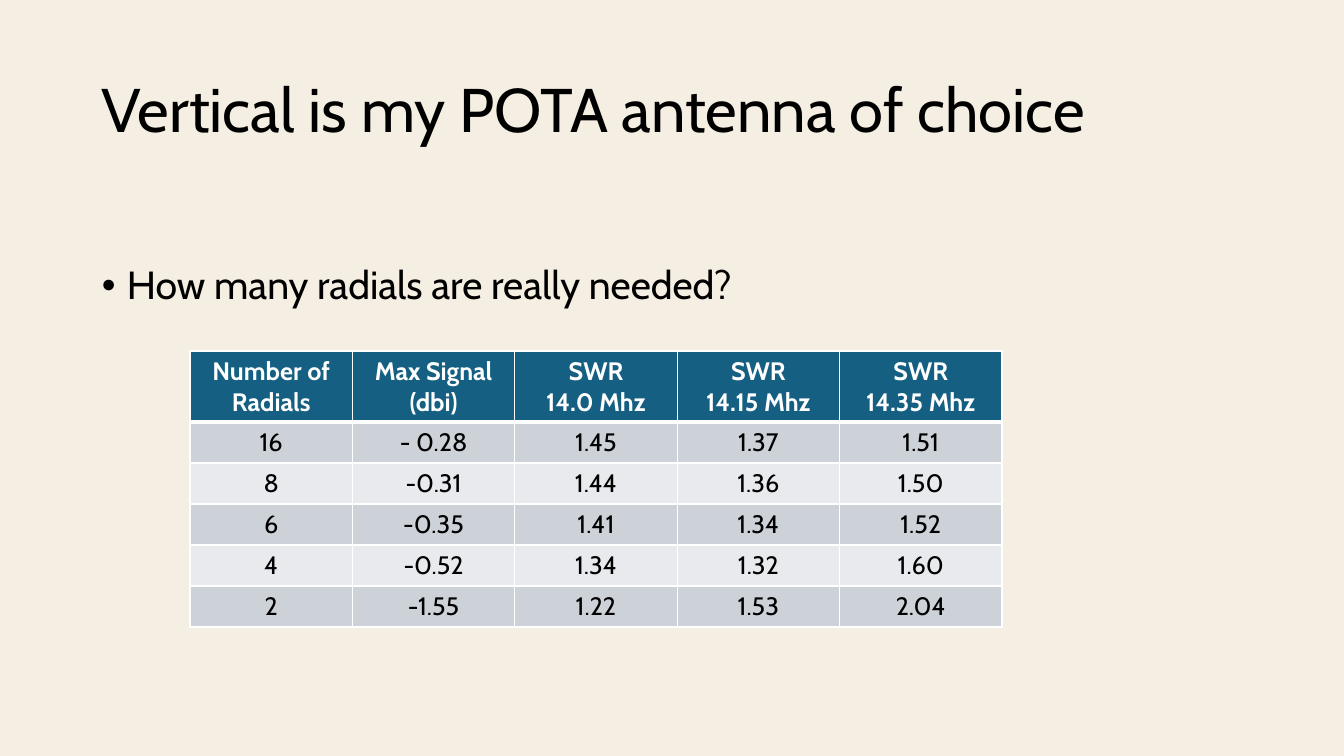
from dataclasses import dataclass

from lxml import etree
from pptx import Presentation
from pptx.dml.color import RGBColor
from pptx.enum.text import MSO_ANCHOR, PP_ALIGN
from pptx.oxml.ns import qn
from pptx.util import Pt

LEFT, CENTER = PP_ALIGN.LEFT, PP_ALIGN.CENTER
TOP, MIDDLE = MSO_ANCHOR.TOP, MSO_ANCHOR.MIDDLE
EMU_PER_PX = 914400 / 100.8
EMU_PER_PT = 12700


@dataclass(frozen=True)
class Theme:
    font: str = "Cabin"
    background: str = "F5EFE3"
    ink: str = "000000"
    white: str = "FFFFFF"
    header: str = "156082"
    bands: tuple = ("CCD2D8", "E8EAED")
    title_size: int = 44
    body_size: int = 28
    table_size: int = 18


THEME = Theme()

HEADERS = ["Number of Radials", "Max Signal (dbi)", "SWR\n14.0 Mhz",
           "SWR\n14.15 Mhz", "SWR\n14.35 Mhz"]
READINGS = [
    ["16", "- 0.28", "1.45", "1.37", "1.51"],
    ["8", "-0.31", "1.44", "1.36", "1.50"],
    ["6", "-0.35", "1.41", "1.34", "1.52"],
    ["4", "-0.52", "1.34", "1.32", "1.60"],
    ["2", "-1.55", "1.22", "1.53", "2.04"],
]


def px(n):
    return round(n * EMU_PER_PX)


def add_bullet(p, indent):
    pPr = p._p.get_or_add_pPr()
    pPr.set("marL", str(px(indent)))
    pPr.set("indent", str(-px(indent)))
    etree.SubElement(pPr, qn("a:buFont")).set("typeface", "Arial")
    etree.SubElement(pPr, qn("a:buChar")).set("char", "•")


def write(tf, text, size, color=THEME.ink, bold=False, align=LEFT,
          spacing=None, bullet_indent=0):
    for i, line in enumerate(text.split("\n")):
        p = tf.add_paragraph() if i else tf.paragraphs[0]
        p.alignment = align
        if spacing:
            p.line_spacing = spacing
        if bullet_indent:
            add_bullet(p, bullet_indent)
        r = p.add_run()
        r.text = line
        r.font.name = THEME.font
        r.font.size = Pt(size)
        r.font.bold = bold
        r.font.color.rgb = RGBColor.from_string(color)


def add_text(slide, box, text, size, anchor=TOP, **fmt):
    tf = slide.shapes.add_textbox(*map(px, box)).text_frame
    tf.word_wrap = True
    tf.vertical_anchor = anchor
    write(tf, text, size, spacing=0.9, **fmt)


def set_borders(cell, **widths):
    tcPr = cell._tc.get_or_add_tcPr()
    for side in "LRTB":
        ln = etree.SubElement(tcPr, qn(f"a:ln{side}"))
        ln.set("w", str(widths.get(side, 1) * EMU_PER_PT))
        fill = etree.SubElement(ln, qn("a:solidFill"))
        etree.SubElement(fill, qn("a:srgbClr")).set("val", THEME.white)


def add_radials_table(slide, box, header_height):
    rows = [HEADERS] + READINGS
    left, top, width, height = box
    table = slide.shapes.add_table(len(rows), len(HEADERS), *map(px, box)).table
    for col in table.columns:
        col.width = px(width / len(HEADERS))
    for i, values in enumerate(rows):
        is_header = i == 0
        row_height = header_height if is_header else (height - header_height) / len(READINGS)
        table.rows[i].height = px(row_height)
        fill = THEME.header if is_header else THEME.bands[(i - 1) % 2]
        color = THEME.white if is_header else THEME.ink
        for j, value in enumerate(values):
            cell = table.cell(i, j)
            set_borders(cell, B=3 if is_header else 1, T=3 if i == 1 else 1)
            cell.fill.solid()
            cell.fill.fore_color.rgb = RGBColor.from_string(fill)
            write(cell.text_frame, value, THEME.table_size, color=color,
                  bold=is_header, align=CENTER)


def build_antenna_slide(prs):
    slide = prs.slides.add_slide(prs.slide_layouts[6])
    slide.background.fill.solid()
    slide.background.fill.fore_color.rgb = RGBColor.from_string(THEME.background)
    add_text(slide, (92, 40, 1159, 146), "Vertical is my POTA antenna of choice",
             THEME.title_size, anchor=MIDDLE)
    add_text(slide, (92, 261, 1159, 419), "How many radials are really needed?",
             THEME.body_size, bullet_indent=25)
    add_radials_table(slide, (190, 351, 812, 276), header_height=71)


def main():
    prs = Presentation()
    prs.slide_width, prs.slide_height = px(1344), px(756)
    build_antenna_slide(prs)
    prs.save("out.pptx")


if __name__ == "__main__":
    main()
